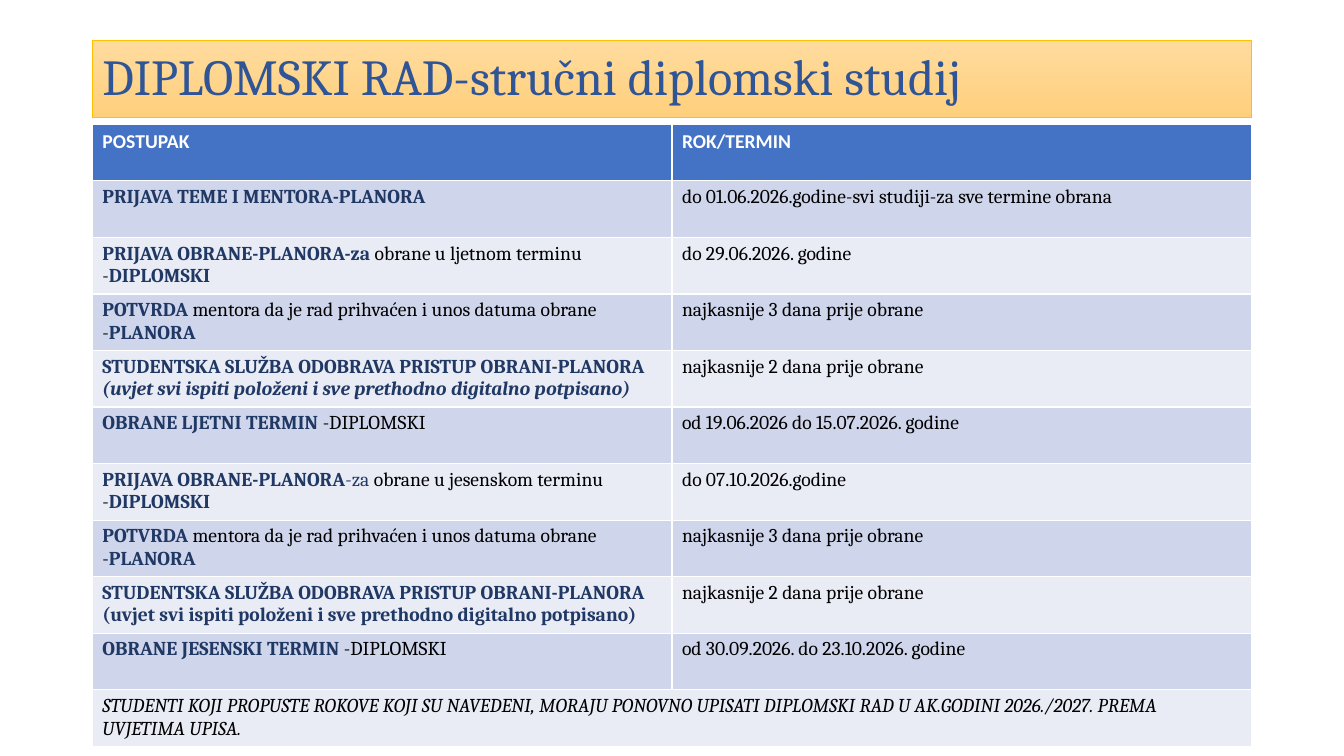
from dataclasses import dataclass

from pptx import Presentation
from pptx.dml.color import RGBColor
from pptx.enum.text import MSO_ANCHOR, MSO_AUTO_SIZE, PP_ALIGN
from pptx.util import Pt

LEFT = PP_ALIGN.LEFT
MIDDLE = MSO_ANCHOR.MIDDLE
NO_FIT = MSO_AUTO_SIZE.NONE


@dataclass
class Theme:
    title: str = "2F5597"
    top: str = "FFDB9E"
    base: str = "FFD07C"
    edge: str = "FFC000"
    head: str = "4472C4"
    dark: str = "CFD5EA"
    light: str = "E9EBF5"
    white: str = "FFFFFF"
    navy: str = "203864"
    black: str = "000000"
    serif: str = "Cambria"
    sans: str = "Calibri"
    big: int = 36
    body: int = 14


theme = Theme()
rgb = RGBColor.from_string


def add_run(para, text, color, bold=False, italic=False, face=theme.serif, size=theme.body):
    run = para.add_run()
    run.text = text
    font = run.font
    font.name, font.size = face, Pt(size)
    font.bold, font.italic = bold, italic
    font.color.rgb = rgb(color)


def fill_cell(cell, paras, color):
    cell.fill.solid()
    cell.fill.fore_color.rgb = rgb(color)
    frame = cell.text_frame
    for i, runs in enumerate(paras):
        para = frame.add_paragraph() if i else frame.paragraphs[0]
        for run in runs:
            add_run(para, *run)


deck = Presentation()
deck.slide_width, deck.slide_height = Pt(960), Pt(540)
slide = deck.slides.add_slide(deck.slide_layouts[5])

title = slide.shapes.title
title.left, title.top, title.width, title.height = Pt(66), Pt(28.8), Pt(828), Pt(55.4)
title.fill.gradient()
title.fill.gradient_angle = 270
for stop, color, place in zip(title.fill.gradient_stops, (theme.top, theme.base), (0, 1)):
    stop.color.rgb = rgb(color)
    stop.position = place
title.line.color.rgb = rgb(theme.edge)
title.line.width = Pt(0.5)
frame = title.text_frame
frame.word_wrap = True
frame.auto_size = NO_FIT
frame.vertical_anchor = MIDDLE
para = frame.paragraphs[0]
para.alignment = LEFT
para.line_spacing = 0.9
add_run(para, "DIPLOMSKI RAD-stručni diplomski studij", theme.title, size=theme.big)

navy, black = theme.navy, theme.black
proof = [[("POTVRDA ", navy, True),
          ("mentora da je rad prihvaćen i unos datuma obrane -", black),
          ("PLANORA", navy, True)]]
office = "STUDENTSKA SLUŽBA ODOBRAVA PRISTUP OBRANI-PLANORA"
terms = "(uvjet svi ispiti položeni i sve prethodno digitalno potpisano)"
three = "najkasnije 3 dana prije obrane"
two = "najkasnije 2 dana prije obrane"
steps = [
    ([[("PRIJAVA TEME I MENTORA-PLANORA", navy, True)]],
     "do 01.06.2026.godine-svi studiji-za sve termine obrana"),
    ([[("PRIJAVA OBRANE-PLANORA-za ", navy, True),
       ("obrane u ljetnom terminu -", black),
       ("DIPLOMSKI", navy, True)]],
     "do 29.06.2026. godine"),
    (proof, three),
    ([[(office, navy, True)], [(terms, navy, True, True)]], two),
    ([[("OBRANE LJETNI TERMIN ", navy, True), ("-DIPLOMSKI", black)]],
     "od 19.06.2026 do 15.07.2026. godine"),
    ([[("PRIJAVA OBRANE-PLANORA", navy, True),
       ("-za ", navy),
       ("obrane u jesenskom terminu -", black),
       ("DIPLOMSKI", navy, True)]],
     "do 07.10.2026.godine"),
    (proof, three),
    ([[(f"{office} {terms}", navy, True)]], two),
    ([[("OBRANE JESENSKI TERMIN ", navy, True), ("-DIPLOMSKI", black)]],
     "od 30.09.2026. do 23.10.2026. godine"),
]
note = ("STUDENTI KOJI PROPUSTE ROKOVE KOJI SU NAVEDENI, MORAJU PONOVNO UPISATI "
        "DIPLOMSKI RAD U AK.GODINI 2026./2027. PREMA UVJETIMA UPISA.")

count = len(steps) + 2
pitch = 40.4
table = slide.shapes.add_table(count, 2, Pt(66), Pt(88.8), Pt(828), Pt(pitch * count)).table
for row in table.rows:
    row.height = Pt(pitch)
for col, text in enumerate(("POSTUPAK", "ROK/TERMIN")):
    fill_cell(table.cell(0, col), [[(text, theme.white, True, False, theme.sans)]], theme.head)
for row, (step, date) in enumerate(steps, 1):
    band = theme.dark if row % 2 else theme.light
    fill_cell(table.cell(row, 0), step, band)
    fill_cell(table.cell(row, 1), [[(date, black)]], band)
last = table.cell(count - 1, 0)
last.merge(table.cell(count - 1, 1))
fill_cell(last, [[(note, black, False, True)]], theme.light)

deck.save("out.pptx")
